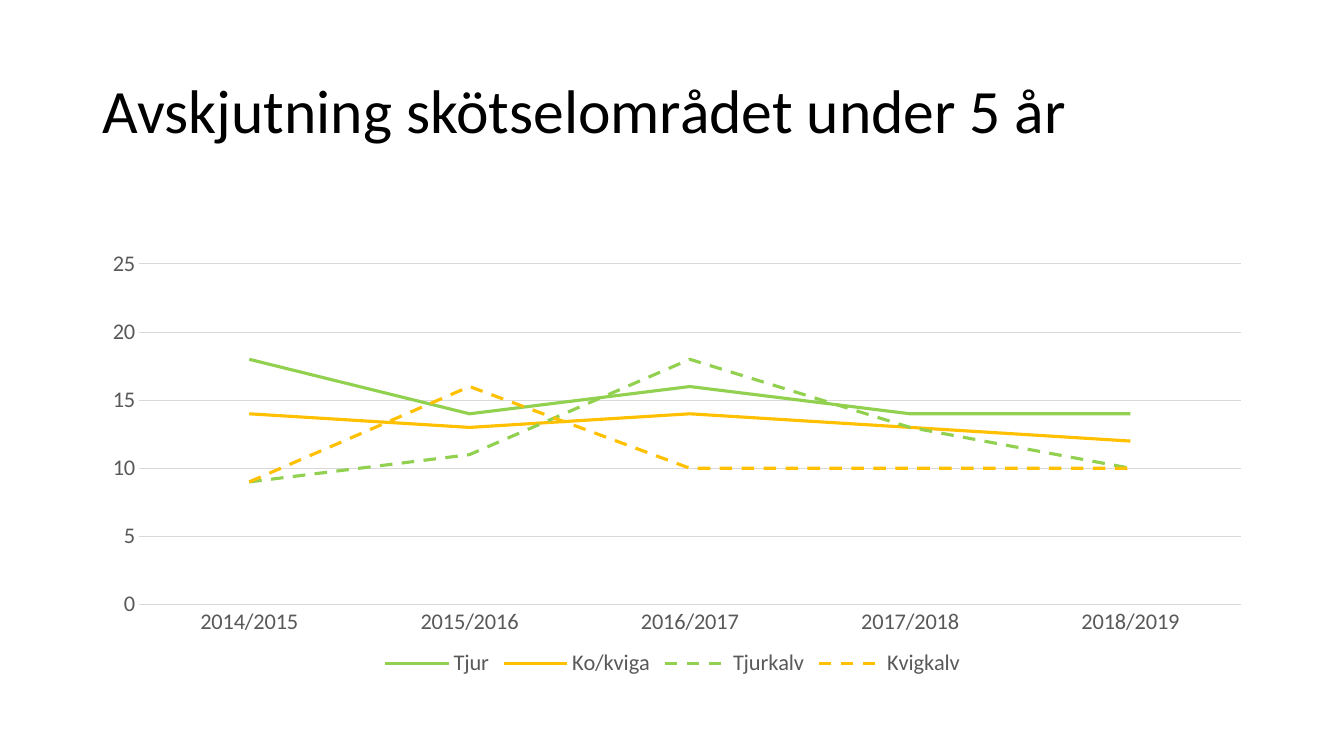
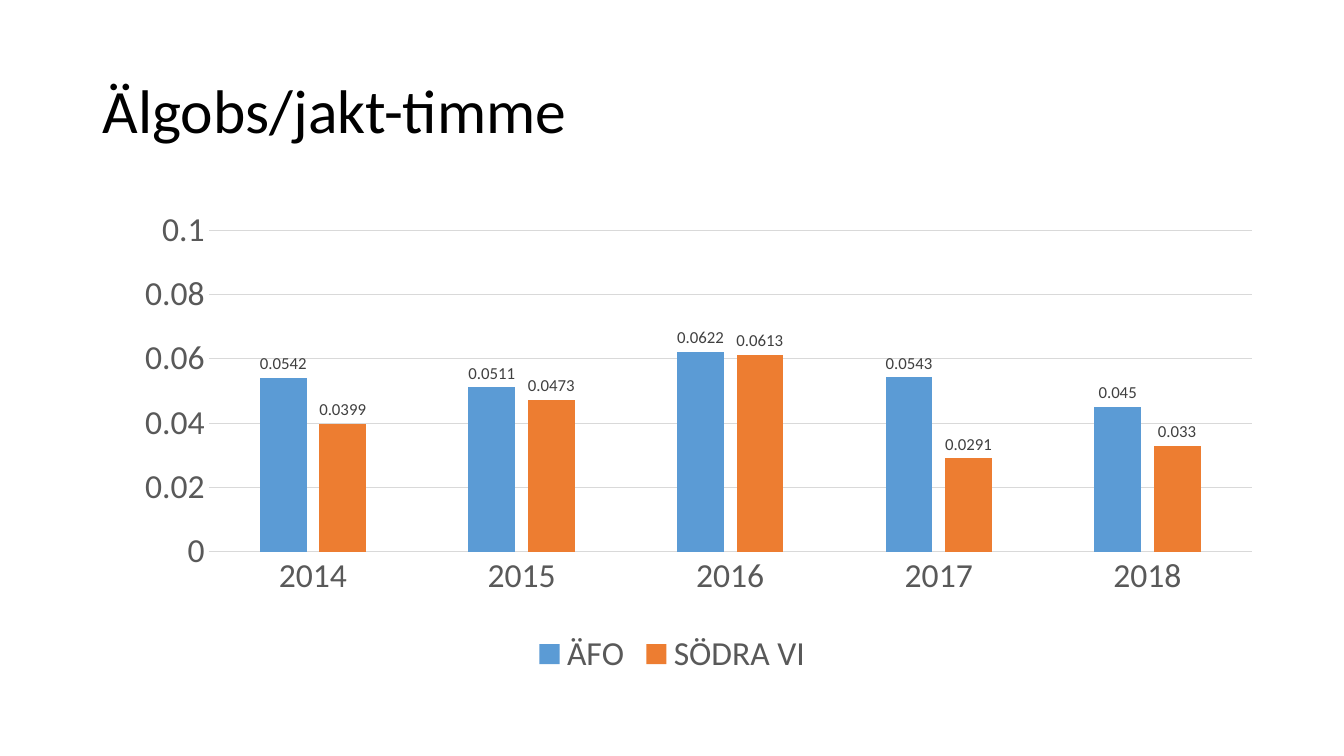
from dataclasses import dataclass

from lxml.etree import SubElement
from pptx import Presentation
from pptx.chart.data import CategoryChartData
from pptx.dml.color import RGBColor
from pptx.enum.chart import (
    XL_CHART_TYPE as ChartType,
    XL_LABEL_POSITION as LabelPos,
    XL_LEGEND_POSITION as LegendPos,
    XL_TICK_MARK as Tick,
)
from pptx.enum.dml import MSO_LINE_DASH_STYLE as Dash
from pptx.enum.text import MSO_ANCHOR as Anchor
from pptx.oxml import parse_xml
from pptx.oxml.ns import nsdecls, qn
from pptx.util import Inches, Pt


@dataclass(frozen=True)
class Theme:
    font: str = "Calibri"
    title: str = "000000"
    text: str = "595959"
    label: str = "404040"
    rule: str = "D9D9D9"
    green: str = "92D050"
    amber: str = "FFC000"
    blue: str = "5B9BD5"
    orange: str = "ED7D31"
    title_size: int = 44
    label_size: int = 12
    rule_width: float = 0.75
    series_width: float = 2.25


@dataclass(frozen=True)
class Box:
    left: float
    top: float
    width: float
    height: float

    def emu(self) -> tuple:
        return tuple(Inches(v) for v in (self.left, self.top, self.width, self.height))


@dataclass(frozen=True)
class Series:
    name: str
    values: tuple
    color: str
    dashed: bool = False


@dataclass(frozen=True)
class ChartSlide:
    title: str
    kind: ChartType
    categories: tuple
    series: tuple
    plot: Box
    top_value: float
    step: float
    text_size: int


THEME = Theme()
WIDTH, HEIGHT = 13.33, 7.5
MARGIN = 0.92
CONTENT_WIDTH = 11.5
TITLE_BOX = Box(MARGIN, 0.4, CONTENT_WIDTH, 1.45)
CHART_BOX = Box(MARGIN, 2, CONTENT_WIDTH, 4.76)

SLIDES = (
    ChartSlide(
        "Avskjutning skötselområdet under 5 år",
        ChartType.LINE,
        tuple(f"{year}/{year + 1}" for year in range(2014, 2019)),
        (
            Series("Tjur", (18, 14, 16, 14, 14), THEME.green),
            Series("Ko/kviga", (14, 13, 14, 13, 12), THEME.amber),
            Series("Tjurkalv", (9, 11, 18, 13, 10), THEME.green, dashed=True),
            Series("Kvigkalv", (9, 16, 10, 10, 10), THEME.amber, dashed=True),
        ),
        plot=Box(0.04, 0.13, 0.95, 0.71),
        top_value=25,
        step=5,
        text_size=16,
    ),
    ChartSlide(
        "Älgobs/jakt-timme",
        ChartType.COLUMN_CLUSTERED,
        tuple(str(year) for year in range(2014, 2019)),
        (
            Series("ÄFO", (0.0542, 0.0511, 0.0622, 0.0543, 0.045), THEME.blue),
            Series("SÖDRA VI", (0.0399, 0.0473, 0.0613, 0.0291, 0.033), THEME.orange),
        ),
        plot=Box(0.1, 0.06, 0.9, 0.67),
        top_value=0.1,
        step=0.02,
        text_size=24,
    ),
)


def style_font(font, size: float, color: str) -> None:
    font.name = THEME.font
    font.size = Pt(size)
    font.bold = False
    font.color.rgb = RGBColor.from_string(color)


def style_line(line, color: str, width: float) -> None:
    line.color.rgb = RGBColor.from_string(color)
    line.width = Pt(width)


def add_text(slide, text: str, box: Box, *, size: float, color: str,
             anchor=Anchor.MIDDLE, spacing: float = 0.9) -> None:
    tf = slide.shapes.add_textbox(*box.emu()).text_frame
    tf.word_wrap = True
    tf.vertical_anchor = anchor
    p = tf.paragraphs[0]
    p.line_spacing = spacing
    r = p.add_run()
    r.text = text
    style_font(r.font, size, color)


def place_plot(chart, plot: Box) -> None:
    area = chart.element.find(f".//{qn('c:plotArea')}")
    for old in area.findall(qn("c:layout")):
        area.remove(old)
    layout = parse_xml(f"<c:layout {nsdecls('c')}><c:manualLayout/></c:layout>")
    settings = (
        ("layoutTarget", "inner"), ("xMode", "edge"), ("yMode", "edge"),
        ("x", plot.left), ("y", plot.top), ("w", plot.width), ("h", plot.height),
    )
    for tag, value in settings:
        SubElement(layout[0], qn(f"c:{tag}")).set("val", str(value))
    area.insert(0, layout)


def style_axes(chart, item: ChartSlide) -> None:
    cat, val = chart.category_axis, chart.value_axis
    for axis in (cat, val):
        axis.major_tick_mark = axis.minor_tick_mark = Tick.NONE
        style_font(axis.tick_labels.font, item.text_size, THEME.text)
    style_line(cat.format.line, THEME.rule, THEME.rule_width)
    val.format.line.fill.background()
    val.minimum_scale, val.maximum_scale = 0, item.top_value
    val.major_unit = item.step
    val.has_major_gridlines = True
    style_line(val.major_gridlines.format.line, THEME.rule, THEME.rule_width)


def style_lines(plot, series: tuple) -> None:
    for drawn, s in zip(plot.series, series):
        drawn.smooth = False
        style_line(drawn.format.line, s.color, THEME.series_width)
        if s.dashed:
            drawn.format.line.dash_style = Dash.DASH


def style_columns(plot, series: tuple) -> None:
    plot.gap_width, plot.overlap = 219, -27
    for drawn, s in zip(plot.series, series):
        drawn.format.fill.solid()
        drawn.format.fill.fore_color.rgb = RGBColor.from_string(s.color)
        labels = drawn.data_labels
        labels.show_value = True
        labels.position = LabelPos.OUTSIDE_END
        style_font(labels.font, THEME.label_size, THEME.label)


def add_chart(slide, item: ChartSlide) -> None:
    data = CategoryChartData()
    data.categories = item.categories
    for s in item.series:
        data.add_series(s.name, s.values)
    chart = slide.shapes.add_chart(item.kind, *CHART_BOX.emu(), data).chart
    chart.has_title = False
    style_font(chart.font, item.text_size, THEME.text)
    chart.has_legend = True
    chart.legend.position = LegendPos.BOTTOM
    chart.legend.include_in_layout = False
    style_font(chart.legend.font, item.text_size, THEME.text)
    style_axes(chart, item)
    place_plot(chart, item.plot)
    plot = chart.plots[0]
    plot.vary_by_categories = False
    style_series = style_lines if item.kind == ChartType.LINE else style_columns
    style_series(plot, item.series)


def main() -> None:
    prs = Presentation()
    prs.slide_width, prs.slide_height = Inches(WIDTH), Inches(HEIGHT)
    blank = prs.slide_layouts[6]
    for item in SLIDES:
        slide = prs.slides.add_slide(blank)
        add_text(slide, item.title, TITLE_BOX, size=THEME.title_size, color=THEME.title)
        add_chart(slide, item)
    prs.save("out.pptx")


if __name__ == "__main__":
    main()
